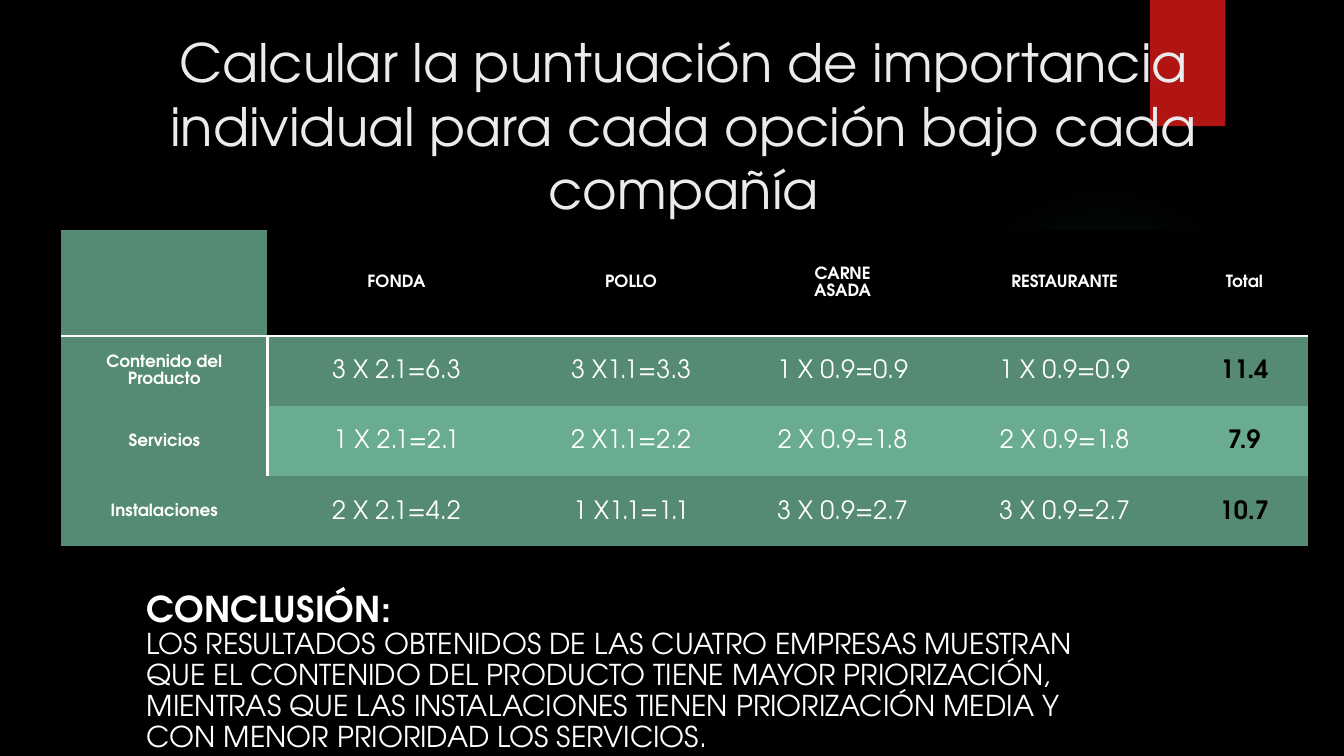
from lxml import etree
from pptx import Presentation
from pptx.dml.color import RGBColor
from pptx.enum import shapes, text
from pptx.oxml import parse_xml
from pptx.util import Cm, Pt

NS = "http://schemas.openxmlformats.org/drawingml/2006/main"
FONT = "TeX Gyre Adventor"
WHITE, BLACK, DARK, LIGHT = "FFFFFF", "000000", "558A73", "6AAC90"


def paint(fill, hue):
    fill.solid()
    fill.fore_color.rgb = RGBColor.from_string(hue)


def style(para, size, hue, bold, gap):
    para.line_spacing = gap
    for run in para.runs:
        run.font.name = FONT
        run.font.size = Pt(size)
        run.font.bold = bold
        run.font.color.rgb = RGBColor.from_string(hue)


deck = Presentation()
deck.slide_width, deck.slide_height = Cm(33.87), Cm(19.05)
slide = deck.slides.add_slide(deck.slide_layouts[5])
paint(slide.background.fill, BLACK)
items = slide.shapes

# Faint glow, fading out from its centre
glow = items.add_shape(shapes.MSO_SHAPE.OVAL, Cm(23.9), Cm(4.65), Cm(7.82), Cm(7.82))
glow.shadow.inherit = False
glow.line.fill.background()
stops = "".join(
    f'<a:gs pos="{pos}000"><a:srgbClr val="50B9C1"><a:alpha val="{alpha}000"/></a:srgbClr></a:gs>'
    for pos, alpha in [(0, 7), (36, 6), (69, 0), (100, 0)])
fade = parse_xml(
    f'<a:gradFill xmlns:a="{NS}"><a:gsLst>{stops}</a:gsLst><a:path path="circle">'
    '<a:fillToRect l="50000" t="50000" r="50000" b="50000"/></a:path></a:gradFill>')
glow.element.spPr.find(f"{{{NS}}}prstGeom").addnext(fade)

# Red tab
tab = items.add_shape(shapes.MSO_SHAPE.RECTANGLE, Cm(28.98), 0, Cm(1.9), Cm(3.18))
tab.shadow.inherit = False
tab.line.fill.background()
paint(tab.fill, "B01513")

# Score table
rows = [
    ["", "FONDA", "POLLO", "CARNE\nASADA", "RESTAURANTE", "Total"],
    ["Contenido del Producto", "3 X 2.1=6.3", "3 X1.1=3.3", "1 X 0.9=0.9", "1 X 0.9=0.9", "11.4"],
    ["Servicios", "1 X 2.1=2.1", "2 X1.1=2.2", "2 X 0.9=1.8", "2 X 0.9=1.8", "7.9"],
    ["Instalaciones", "2 X 2.1=4.2", "1 X1.1=1.1", "3 X 0.9=2.7", "3 X 0.9=2.7", "10.7"],
]
frame = items.add_table(4, 6, Cm(1.54), Cm(5.79), Cm(31.42), Cm(7.98))
grid = frame.table
grid._tbl.tblPr.find(f"{{{NS}}}tableStyleId").text = "{2D5ABB26-0587-4C30-8999-92F81FD0307C}"
for col, width in zip(grid.columns, [5.2, 6.5, 5.33, 5.33, 5.86, 3.2]):
    col.width = Cm(width)
for row, height in zip(grid.rows, [2.67, 1.77, 1.77, 1.77]):
    row.height = Cm(height)

for r, row in enumerate(rows):
    for c, word in enumerate(row):
        cell = grid.cell(r, c)
        cell.text_frame.text = word
        cell.vertical_anchor = text.MSO_ANCHOR.MIDDLE
        cell.margin_left = cell.margin_right = Cm(0.18)
        cell.margin_top = cell.margin_bottom = 0
        label = r == 0 or c == 0
        for para in cell.text_frame.paragraphs:
            para.alignment = text.PP_ALIGN.CENTER
            style(para, 12 if label else 18, BLACK if c == 5 and r else WHITE,
                  label or c == 5, 1.07)
        if r == 0 and c:
            paint(cell.fill, BLACK)
        else:
            paint(cell.fill, LIGHT if r == 2 and c else DARK)
        # Rules under the header and beside the row labels
        sides = ["lnB"] * (r == 0) + ["lnR"] * (c == 0 and r in (1, 2))
        for side in sides:
            rule = etree.fromstring(
                f'<a:{side} xmlns:a="{NS}" w="25400"><a:solidFill>'
                f'<a:srgbClr val="{WHITE}"/></a:solidFill></a:{side}>')
            cell._tc.get_or_add_tcPr().insert(0, rule)

# Title
title = items.title
title.left, title.top, title.width, title.height = Cm(1.5), Cm(0.51), Cm(31.45), Cm(5.28)
head = title.text_frame
head.text = "Calcular la puntuación de importancia individual para cada opción bajo cada compañía"
head.word_wrap = True
head.auto_size = text.MSO_AUTO_SIZE.NONE
head.vertical_anchor = text.MSO_ANCHOR.MIDDLE
head.paragraphs[0].alignment = text.PP_ALIGN.CENTER
style(head.paragraphs[0], 37.8, "EBEBEB", False, 1.0)
items._spTree.append(title.element)

# Conclusion
box = items.add_textbox(Cm(3.45), Cm(15.06), Cm(25.2), Cm(5.28)).text_frame
box.word_wrap = True
box.vertical_anchor = text.MSO_ANCHOR.MIDDLE
box.margin_bottom = Cm(1.62)
box.text = (
    "CONCLUSIÓN:\n"
    "LOS RESULTADOS OBTENIDOS DE LAS CUATRO EMPRESAS MUESTRAN QUE EL CONTENIDO DEL "
    "PRODUCTO TIENE MAYOR PRIORIZACIÓN, MIENTRAS QUE LAS INSTALACIONES TIENEN "
    "PRIORIZACIÓN MEDIA Y CON MENOR PRIORIDAD LOS SERVICIOS.")
style(box.paragraphs[0], 25.4, WHITE, True, 0.9)
style(box.paragraphs[1], 20.5, WHITE, False, 0.9)

deck.save("out.pptx")
